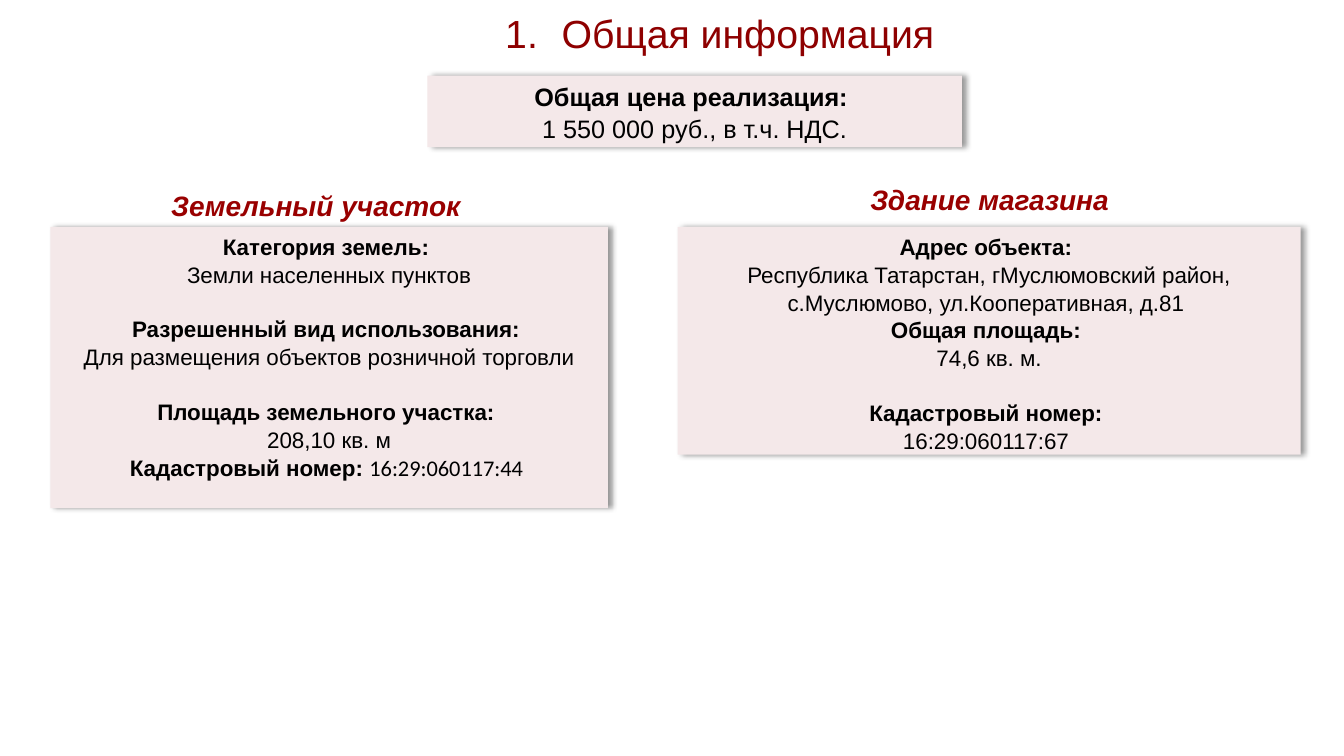
from lxml import etree
from pptx import Presentation
from pptx.dml.color import RGBColor
from pptx.enum.shapes import MSO_SHAPE
from pptx.enum.text import MSO_ANCHOR, PP_ALIGN
from pptx.oxml.ns import qn
from pptx.util import Inches, Pt

RECTANGLE = MSO_SHAPE.RECTANGLE
TOP, MIDDLE = MSO_ANCHOR.TOP, MSO_ANCHOR.MIDDLE
LEFT, CENTER = PP_ALIGN.LEFT, PP_ALIGN.CENTER


def color(code):
    return RGBColor.from_string(code)


class Sheet:
    font = "Arial"
    number_font = "Calibri"
    ink = "000000"
    title_ink = "8E0000"
    heading_ink = "990000"
    card_fill = "F4E8E9"
    card_spacing = 1.04
    line_height = 1.2

    def __init__(self, deck):
        self.deck = deck
        self.page = deck.slides.add_slide(deck.slide_layouts[6])

    def place(self, left, top, width, height):
        wide, high = self.deck.slide_width, self.deck.slide_height
        return [int(share * side / 100) for share, side in
                zip((left, top, width, height), (wide, high, wide, high))]

    def style(self, span, size, ink, bold=False, italic=False, font=None):
        span.font.name = font or self.font
        span.font.size = Pt(size)
        span.font.color.rgb = color(ink)
        span.font.bold = bold
        span.font.italic = italic

    def label(self, text, area, size, ink, align=CENTER, anchor=TOP, emphasis=False):
        box = self.page.shapes.add_textbox(*self.place(*area))
        box.text_frame.word_wrap = True
        box.text_frame.vertical_anchor = anchor
        box.text_frame.text = text
        para = box.text_frame.paragraphs[0]
        para.alignment = align
        self.style(para.runs[0], size, ink, emphasis, emphasis)
        return para

    def title(self, text, area):
        para = self.label(text, area, 28, self.title_ink, anchor=MIDDLE)
        para.line_spacing = 0.9
        properties = para._p.get_or_add_pPr()
        properties.set("marL", str(Inches(0.56)))
        properties.set("indent", str(-Inches(0.56)))
        etree.SubElement(properties, qn("a:buFont"), typeface="+mj-lt")
        etree.SubElement(properties, qn("a:buAutoNum"), type="arabicPeriod")

    def heading(self, text, area, align=CENTER):
        self.label(text, area, 20, self.heading_ink, align, emphasis=True)

    def add_shadow(self, shape):
        shape.shadow.inherit = False
        effects = shape._element.spPr.find(qn("a:effectLst"))
        shadow = etree.SubElement(effects, qn("a:outerShdw"), blurRad=str(Pt(4)),
                                  dist=str(Pt(3)), dir="0", algn="l", rotWithShape="0")
        black = etree.SubElement(shadow, qn("a:srgbClr"), val="000000")
        etree.SubElement(black, qn("a:alpha"), val="40000")

    def card(self, area, lines, size=16, gaps=()):
        box = self.page.shapes.add_shape(RECTANGLE, *self.place(*area))
        box.fill.solid()
        box.fill.fore_color.rgb = color(self.card_fill)
        box.line.fill.background()
        self.add_shadow(box)
        frame = box.text_frame
        frame.word_wrap = True
        frame.vertical_anchor = TOP
        frame.text = "\n".join(lines)
        for index, para in enumerate(frame.paragraphs):
            para.alignment = CENTER
            para.line_spacing = self.card_spacing
            if index in gaps:
                para.space_before = Pt(size * self.line_height)
            for span in para.runs:
                self.style(span, size, self.ink, bold=span.text.endswith(": "))
        return frame

    def append_number(self, frame, text):
        span = frame.paragraphs[-1].add_run()
        span.text = text
        self.style(span, 16, self.ink, font=self.number_font)


def main():
    deck = Presentation()
    deck.slide_width, deck.slide_height = Inches(13.33), Inches(7.5)
    sheet = Sheet(deck)

    sheet.title("Общая информация", (16.05, 1.33, 75, 6.8))
    land = sheet.card((3.75, 30, 41.48, 37.2), [
        "Категория земель: ",
        "Земли населенных пунктов",
        "Разрешенный вид использования: ",
        "Для размещения объектов розничной торговли",
        "Площадь земельного участка: ",
        "208,10 кв. м",
        "Кадастровый номер: ",
    ], gaps=(2, 4))
    sheet.append_number(land, "16:29:060117:44 ")
    sheet.card((50.41, 30, 46.36, 30.13), [
        "Адрес объекта: ",
        "Республика Татарстан, гМуслюмовский район, с.Муслюмово, ул.Кооперативная, д.81 ",
        "Общая площадь: ",
        "74,6 кв. м.",
        "Кадастровый номер: ",
        "16:29:060117:67 ",
    ], gaps=(4,))
    sheet.card((31.81, 10, 39.76, 9.47), [
        "Общая цена реализация: ",
        "1 550 000 руб., в т.ч. НДС.",
    ], size=18)
    sheet.heading("Земельный участок", (12, 24.27, 25.81, 5.87), LEFT)
    sheet.heading("Здание магазина", (49.89, 23.47, 47.49, 5.87))

    deck.save("out.pptx")


if __name__ == "__main__":
    main()
